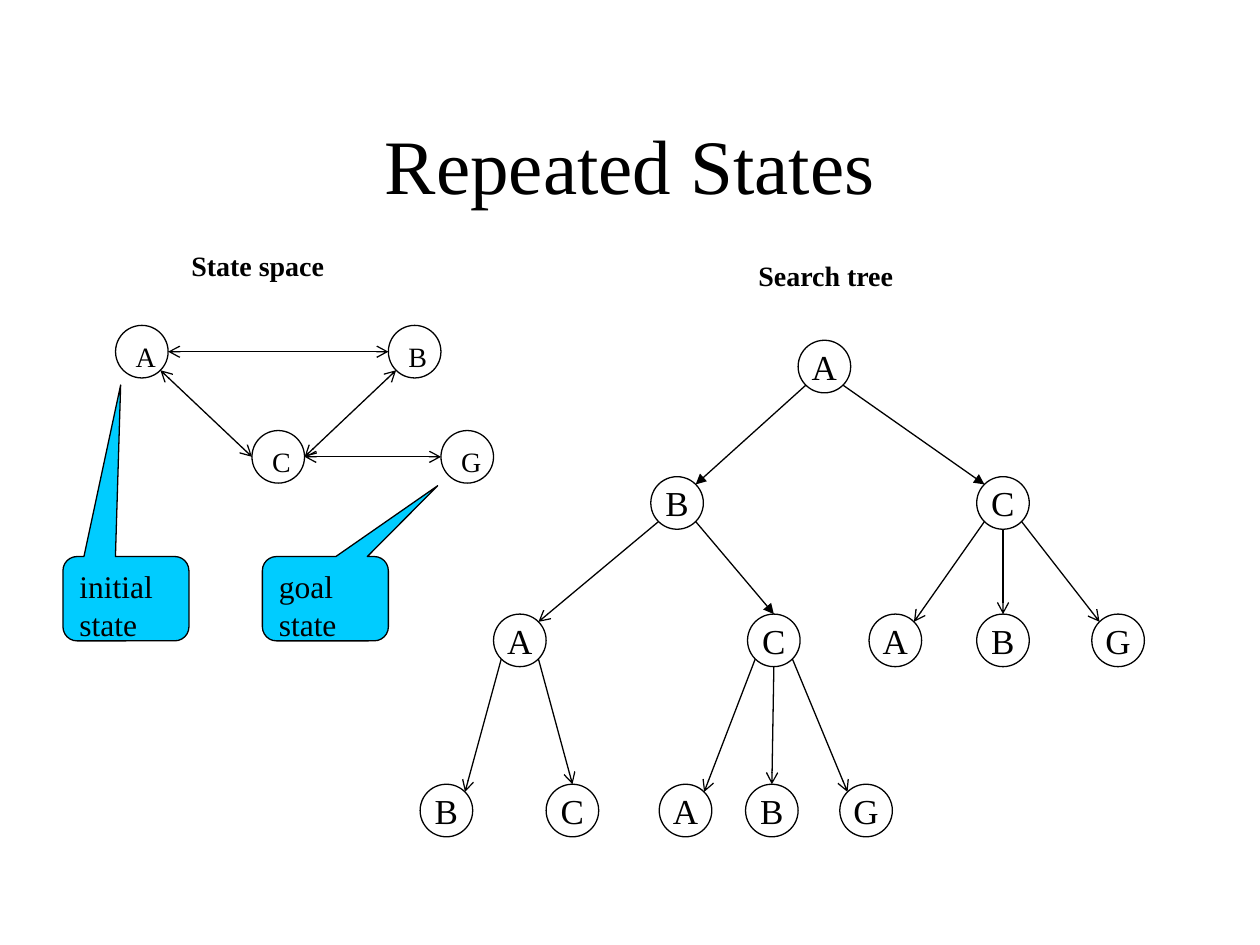
"""Build the Repeated States slide: a state space beside its search tree."""
from dataclasses import dataclass
from math import sqrt

from lxml import etree
from pptx import Presentation
from pptx.dml.color import RGBColor
from pptx.enum.shapes import MSO_CONNECTOR, MSO_SHAPE
from pptx.enum.text import MSO_ANCHOR, MSO_AUTO_SIZE, PP_ALIGN
from pptx.oxml.ns import qn
from pptx.util import Cm, Pt

OVAL = MSO_SHAPE.OVAL
CALLOUT = MSO_SHAPE.ROUNDED_RECTANGULAR_CALLOUT
STRAIGHT = MSO_CONNECTOR.STRAIGHT
TOP, MIDDLE = MSO_ANCHOR.TOP, MSO_ANCHOR.MIDDLE
LEFT, CENTER = PP_ALIGN.LEFT, PP_ALIGN.CENTER
NO_FIT, GROW = MSO_AUTO_SIZE.NONE, MSO_AUTO_SIZE.SHAPE_TO_FIT_TEXT

COLORS = {"ink": "000000", "callout": "00CCFF"}
FONT = "Times New Roman"
DIAMETER = 1.06
LINE_WIDTH = 0.75
D = 1 / sqrt(2)
SITES = {
    "top": (0, -1), "bottom": (0, 1), "left": (-1, 0), "right": (1, 0),
    "top left": (-D, -D), "top right": (D, -D),
    "bottom left": (-D, D), "bottom right": (D, D),
}


@dataclass
class Node:
    key: str
    x: float
    y: float


@dataclass
class Edge:
    start: str
    start_site: str
    end: str
    end_site: str
    tail: str = "arrow"
    head: str = ""


@dataclass
class Label:
    text: str
    x: float
    y: float
    width: float


@dataclass
class Callout:
    text: str
    x: float
    tip: tuple[float, float]


STATE_Y = (6.56, 8.68)
STATE_NODES = [
    Node("A", 2.33, STATE_Y[0]), Node("B", 7.83, STATE_Y[0]),
    Node("C", 5.08, STATE_Y[1]), Node("G", 8.89, STATE_Y[1]),
]
STATE_EDGES = [
    Edge("A", "right", "B", "left", head="arrow"),
    Edge("A", "bottom right", "C", "left", head="arrow"),
    Edge("C", "right", "B", "bottom left", head="arrow"),
    Edge("C", "right", "G", "left", head="arrow"),
]
LEVELS = (6.86, 9.61, 12.38, 15.81)
TREE_NODES = [
    Node("A", 16.09, LEVELS[0]),
    Node("AB", 13.12, LEVELS[1]), Node("AC", 19.69, LEVELS[1]),
    Node("ABA", 9.95, LEVELS[2]), Node("ABC", 15.07, LEVELS[2]),
    Node("ACA", 17.52, LEVELS[2]), Node("ACB", 19.69, LEVELS[2]),
    Node("ACG", 22.01, LEVELS[2]),
    Node("ABAB", 8.47, LEVELS[3]), Node("ABAC", 11.01, LEVELS[3]),
    Node("ABCA", 13.29, LEVELS[3]), Node("ABCB", 15.03, LEVELS[3]),
    Node("ABCG", 16.93, LEVELS[3]),
]
TREE_EDGES = [
    Edge("A", "bottom left", "AB", "top right", "triangle"),
    Edge("A", "bottom right", "AC", "top left", "triangle"),
    Edge("AB", "bottom left", "ABA", "top right"),
    Edge("AB", "bottom right", "ABC", "top", "triangle"),
    Edge("ABA", "bottom left", "ABAB", "top right"),
    Edge("ABA", "bottom right", "ABAC", "top"),
]
for parent in ("ABC", "AC"):
    TREE_EDGES += [
        Edge(parent, "bottom left", parent + "A", "top right"),
        Edge(parent, "bottom", parent + "B", "top"),
        Edge(parent, "bottom right", parent + "G", "top left"),
    ]
LABELS = [
    Label("State space", 3.61, 4.88, 3.23),
    Label("Search tree", 15.04, 5.08, 3.28),
]
CALLOUTS = [
    Callout("initial state", 1.27, (-0.042, -2.534)),
    Callout("goal state", 5.29, (0.892, -1.34)),
]


def color(name: str) -> RGBColor:
    return RGBColor.from_string(COLORS[name])


def write(s, text: str, size: int, align=LEFT, anchor=TOP, wrap: bool = True,
          bold: bool = False) -> None:
    tf = s.text_frame
    tf.word_wrap = wrap
    tf.vertical_anchor = anchor
    p = tf.paragraphs[0]
    p.text = text
    p.alignment = align
    p.font.name, p.font.size, p.font.bold = FONT, Pt(size), bold
    p.font.color.rgb = color("ink")


def outline(s) -> None:
    s.line.color.rgb = color("ink")
    s.line.width = Pt(LINE_WIDTH)


def add_node(shapes, node: Node, tree: bool):
    s = shapes.add_shape(OVAL, Cm(node.x), Cm(node.y), Cm(DIAMETER), Cm(DIAMETER))
    s.shadow.inherit = False
    s.fill.background()
    outline(s)
    if tree:
        write(s, node.key[-1], 20, CENTER, MIDDLE, wrap=False)
    else:
        write(s, node.key, 16)
    return s


def site_point(node: Node, site: str) -> tuple[Cm, Cm]:
    dx, dy = SITES[site]
    r = DIAMETER / 2
    return Cm(node.x + r * (1 + dx)), Cm(node.y + r * (1 + dy))


def add_edge(shapes, edge: Edge, nodes: dict[str, Node], ovals: dict) -> None:
    s = shapes.add_connector(STRAIGHT, *site_point(nodes[edge.start], edge.start_site),
                             *site_point(nodes[edge.end], edge.end_site))
    if edge.end_site == "top":
        s.end_connect(ovals[edge.end], 0)
    outline(s)
    ln = s.line._get_or_add_ln()
    for tag, kind in (("a:headEnd", edge.head), ("a:tailEnd", edge.tail)):
        if kind:
            etree.SubElement(ln, qn(tag), type=kind)
    etree.SubElement(s._element.spPr, qn("a:effectLst"))


def add_graph(shapes, nodes: list[Node], edges: list[Edge], tree: bool) -> None:
    ovals = {node.key: add_node(shapes, node, tree) for node in nodes}
    by_key = {node.key: node for node in nodes}
    for edge in edges:
        add_edge(shapes, edge, by_key, ovals)


def add_label(shapes, label: Label) -> None:
    s = shapes.add_textbox(Cm(label.x), Cm(label.y), Cm(label.width), Cm(0.94))
    write(s, label.text, 16, wrap=False, bold=True)
    s.text_frame.auto_size = GROW


def add_callout(shapes, callout: Callout) -> None:
    s = shapes.add_shape(CALLOUT, Cm(callout.x), Cm(11.22), Cm(2.54), Cm(1.7))
    s.adjustments[0], s.adjustments[1] = callout.tip
    s.shadow.inherit = False
    s.fill.solid()
    s.fill.fore_color.rgb = color("callout")
    outline(s)
    write(s, callout.text, 18)


def main() -> None:
    prs = Presentation()
    prs.slide_width, prs.slide_height = Cm(25.4), Cm(19.05)
    shapes = prs.slides.add_slide(prs.slide_layouts[5]).shapes
    title = shapes.title
    title.left, title.top, title.width, title.height = Cm(1.9), Cm(1.7), Cm(21.6), Cm(3.18)
    write(title, "Repeated States", 44, CENTER, MIDDLE)
    title.text_frame.auto_size = NO_FIT
    add_graph(shapes, TREE_NODES, TREE_EDGES, True)
    add_graph(shapes, STATE_NODES, STATE_EDGES, False)
    for label in LABELS:
        add_label(shapes, label)
    for callout in CALLOUTS:
        add_callout(shapes, callout)
    prs.save("out.pptx")


if __name__ == "__main__":
    main()
